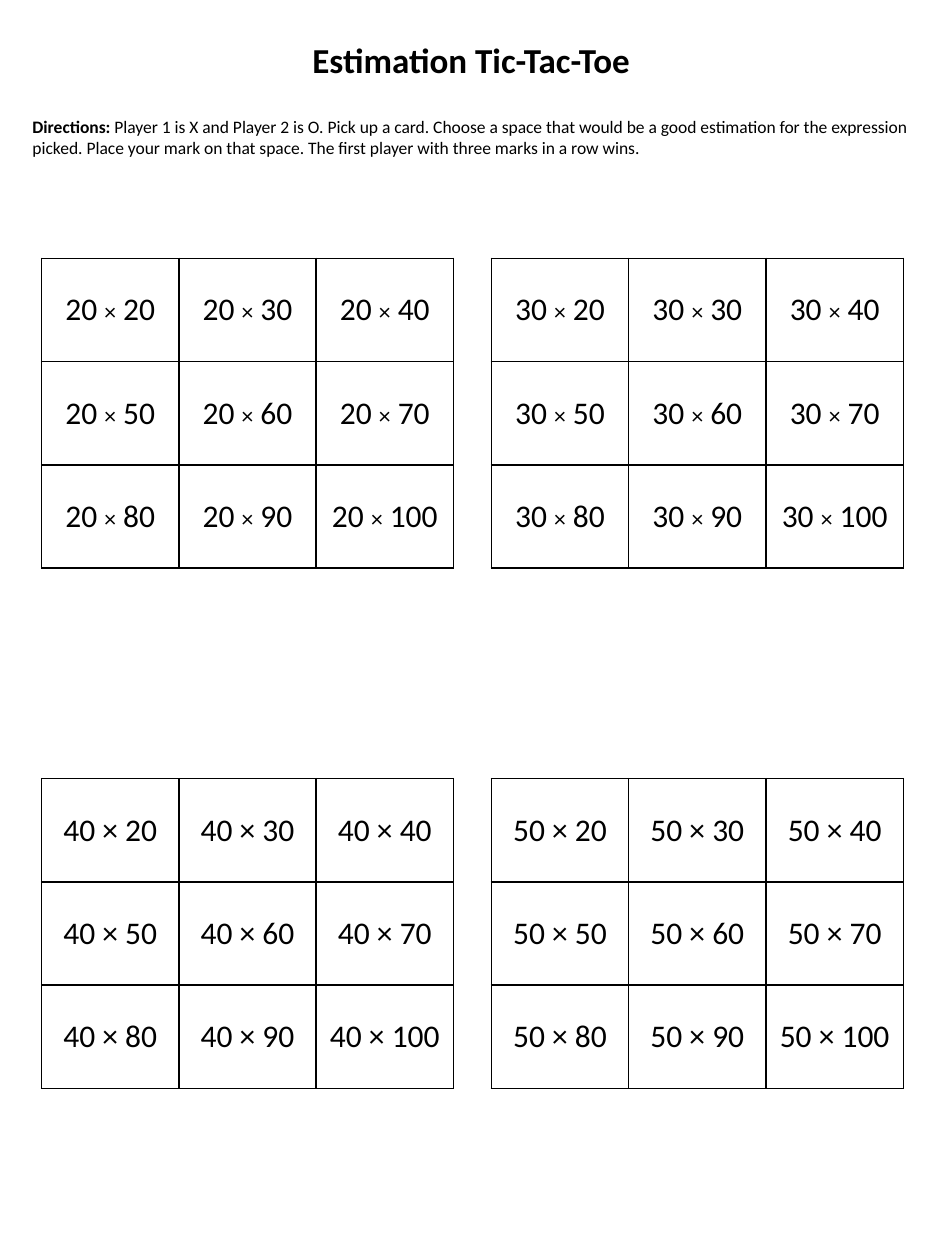
"""Build a one-page Estimation Tic-Tac-Toe worksheet with four game boards."""
from dataclasses import dataclass

from lxml.etree import SubElement
from pptx import Presentation
from pptx.dml.color import RGBColor
from pptx.enum.shapes import MSO_SHAPE
from pptx.enum.text import MSO_ANCHOR, PP_ALIGN
from pptx.oxml.ns import qn
from pptx.util import Inches, Pt


@dataclass(frozen=True)
class Theme:
    font: str = "Calibri"
    ink: str = "000000"
    paper: str = "FFFFFF"
    title: float = 20
    body: float = 10
    number: float = 18
    small_sign: float = 13.5
    border: float = 1


THEME = Theme()
FACTORS = (20, 30, 40, 50, 60, 70, 80, 90, 100)
SIDE = 3
COL_W, ROW_H = 1.09, 0.82
BOARD_LEFTS = (0.33, 3.9)
BOARD_ROWS = (
    (2.05, (20, 30), THEME.small_sign),
    (6.18, (40, 50), THEME.number),
)
DIRECTIONS = (
    " Player 1 is X and Player 2 is O. Pick up a card. Choose a space that "
    "would be a good estimation for the expression picked. Place your mark on "
    "that space. The first player with three marks in a row wins."
)


def add_text(p, text, *, size, bold=False):
    r = p.add_run()
    r.text = text
    r.font.name = THEME.font
    r.font.size = Pt(size)
    r.font.bold = bold
    r.font.color.rgb = RGBColor.from_string(THEME.ink)


def add_banner(s, top, align):
    sp = s.shapes.add_shape(
        MSO_SHAPE.RECTANGLE, Inches(0.16), Inches(top), Inches(7.16), Inches(0.62)
    )
    sp.shadow.inherit = False
    sp.fill.solid()
    sp.fill.fore_color.rgb = RGBColor.from_string(THEME.paper)
    sp.line.color.rgb = RGBColor.from_string(THEME.paper)
    sp.line.width = Pt(THEME.border)
    tf = sp.text_frame
    tf.word_wrap = True
    tf.vertical_anchor = MSO_ANCHOR.MIDDLE
    p = tf.paragraphs[0]
    p.alignment = align
    return p


def style_cell(cell):
    cell.vertical_anchor = MSO_ANCHOR.MIDDLE
    tc_pr = cell._tc.get_or_add_tcPr()
    for edge in ("a:lnL", "a:lnR", "a:lnT", "a:lnB"):
        ln = SubElement(tc_pr, qn(edge), w=str(Pt(THEME.border)))
        fill = SubElement(ln, qn("a:solidFill"))
        SubElement(fill, qn("a:srgbClr"), val=THEME.ink)
    cell.fill.background()


def add_board(s, left, top, base, sign_size):
    table = s.shapes.add_table(
        SIDE, SIDE, Inches(left), Inches(top),
        Inches(SIDE * COL_W), Inches(SIDE * ROW_H),
    ).table
    table.first_row = table.horz_banding = False
    for col in table.columns:
        col.width = Inches(COL_W)
    for row in table.rows:
        row.height = Inches(ROW_H)
    for cell, factor in zip(table.iter_cells(), FACTORS):
        style_cell(cell)
        p = cell.text_frame.paragraphs[0]
        p.alignment = PP_ALIGN.CENTER
        if sign_size == THEME.number:
            add_text(p, f"{base} × {factor}", size=THEME.number)
        else:
            add_text(p, f"{base} ", size=THEME.number)
            add_text(p, "×", size=sign_size)
            add_text(p, f" {factor}", size=THEME.number)


def main():
    prs = Presentation()
    prs.slide_width, prs.slide_height = Inches(7.5), Inches(10)
    s = prs.slides.add_slide(prs.slide_layouts[6])

    p = add_banner(s, 0.16, PP_ALIGN.CENTER)
    add_text(p, "Estimation Tic-Tac-Toe", size=THEME.title, bold=True)

    p = add_banner(s, 0.78, PP_ALIGN.LEFT)
    add_text(p, "Directions:", size=THEME.body, bold=True)
    add_text(p, DIRECTIONS, size=THEME.body)

    for top, bases, sign_size in BOARD_ROWS:
        for left, base in zip(BOARD_LEFTS, bases):
            add_board(s, left, top, base, sign_size)

    prs.save("out.pptx")


if __name__ == "__main__":
    main()
